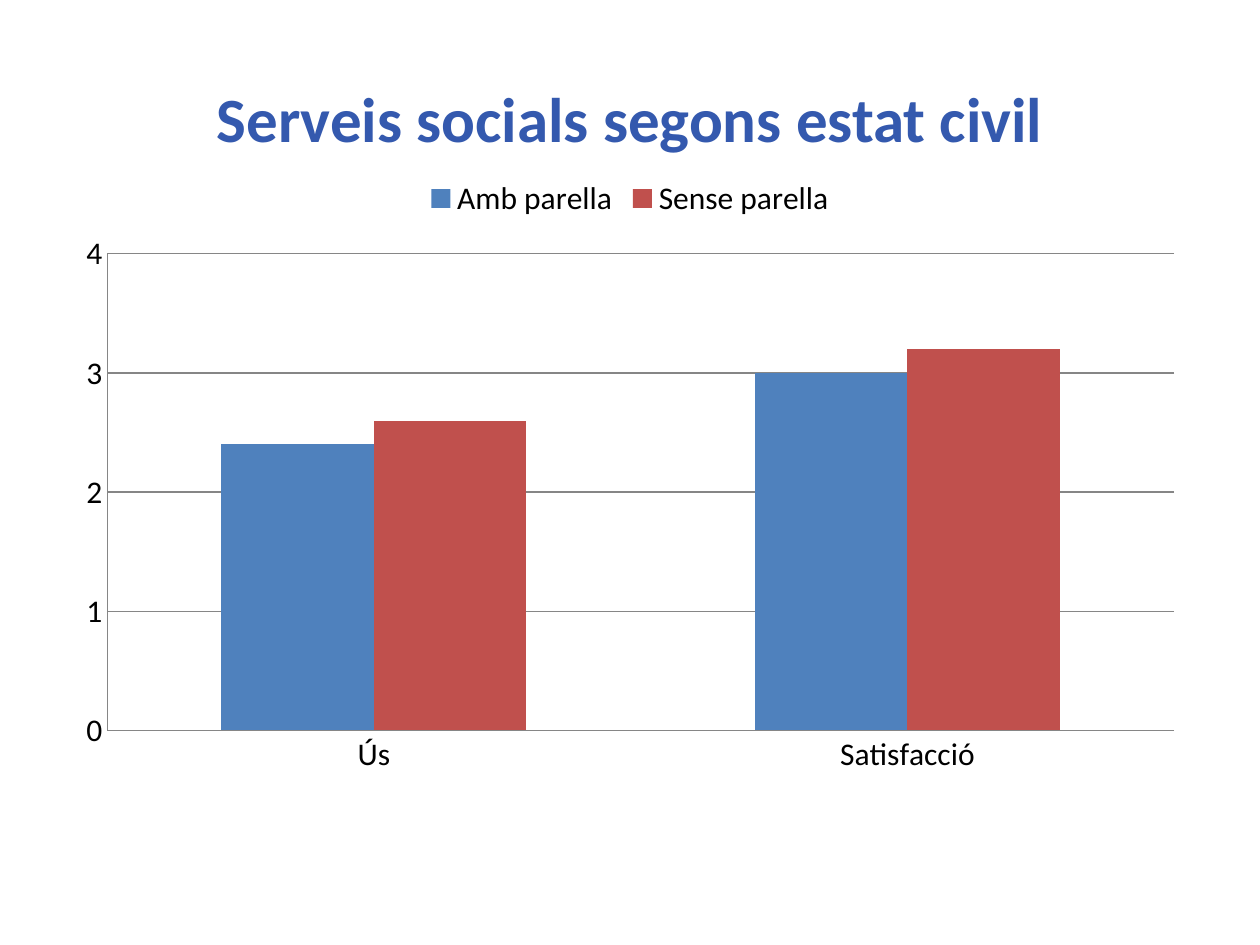
"""Build a slide with a clustered column chart on social services by marital status."""
import pptx
import pptx.chart.data
import pptx.dml.color
import pptx.enum.chart
import pptx.enum.text
import pptx.oxml
import pptx.oxml.ns
import pptx.util

RGBColor = pptx.dml.color.RGBColor
TITLE_BLUE = RGBColor(0x34, 0x59, 0xAE)
BLUE = RGBColor(0x4F, 0x81, 0xBD)
RED = RGBColor(0xC0, 0x50, 0x4D)
GREY = RGBColor(0x86, 0x86, 0x86)
BLACK = RGBColor(0, 0, 0)

FONT = "Calibri"
TITLE = "Serveis socials segons estat civil"
CATEGORIES = ["Ús", "Satisfacció"]
SERIES = [
    ("Amb parella", (2.4, 3), BLUE),
    ("Sense parella", (2.6, 3.2), RED),
]

SLIDE_SIZE = (1260, 945)
TITLE_BOX = (63, 38, 1134, 158)
CHART_BOX = (63, 164, 1134, 624)
PLOT_BOX = (107, 254, 1067, 477)


def px(length):
    """Turn px into EMU."""
    return pptx.util.Emu(length * 914400 // 126)


def add_title(slide):
    """Add the centred heading."""
    frame = slide.shapes.add_textbox(*map(px, TITLE_BOX)).text_frame
    frame.word_wrap = True
    frame.vertical_anchor = pptx.enum.text.MSO_ANCHOR.MIDDLE
    frame.text = TITLE
    heading = frame.paragraphs[0]
    heading.alignment = pptx.enum.text.PP_ALIGN.CENTER
    font = heading.runs[0].font
    font.name, font.size, font.bold = FONT, pptx.util.Pt(36), True
    font.color.rgb = TITLE_BLUE


def place_plot(chart):
    """Fix the inner plot area inside the chart."""
    left, top, width, height = CHART_BOX
    plot_left, plot_top, plot_width, plot_height = PLOT_BOX
    fractions = {
        "x": (plot_left - left) / width,
        "y": (plot_top - top) / height,
        "w": plot_width / width,
        "h": plot_height / height,
    }
    modes = '<c:xMode val="edge"/><c:yMode val="edge"/>'
    sizes = "".join(f'<c:{key} val="{value:.3f}"/>' for key, value in fractions.items())
    layout = pptx.oxml.parse_xml(
        f'<c:layout {pptx.oxml.ns.nsdecls("c")}><c:manualLayout>'
        f'<c:layoutTarget val="inner"/>{modes}{sizes}</c:manualLayout></c:layout>'
    )
    plot_area = chart.plots[0]._element.getparent()
    for old in plot_area.findall(pptx.oxml.ns.qn("c:layout")):
        plot_area.remove(old)
    plot_area.insert(0, layout)


def add_services_chart(slide):
    """Add the column chart with its legend and axes."""
    kinds = pptx.enum.chart
    data = pptx.chart.data.CategoryChartData()
    data.categories = CATEGORIES
    for name, values, _ in SERIES:
        data.add_series(name, values)
    chart = slide.shapes.add_chart(
        kinds.XL_CHART_TYPE.COLUMN_CLUSTERED, *map(px, CHART_BOX), data
    ).chart
    chart.has_title = False
    chart.font.name, chart.font.size = FONT, pptx.util.Pt(18)
    chart.font.color.rgb = BLACK
    chart.has_legend = True
    chart.legend.position = kinds.XL_LEGEND_POSITION.TOP
    chart.legend.include_in_layout = False

    columns = chart.plots[0]
    columns.gap_width, columns.overlap = 150, 0
    columns.vary_by_categories = False
    for series, (_, _, color) in zip(columns.series, SERIES):
        series.format.fill.solid()
        series.format.fill.fore_color.rgb = color

    scale = chart.value_axis
    scale.minimum_scale, scale.maximum_scale, scale.major_unit = 0, 4, 1
    scale.has_major_gridlines = True
    scale.tick_labels.number_format = "0"
    scale.tick_labels.number_format_is_linked = False
    for axis in (chart.category_axis, scale):
        axis.major_tick_mark = kinds.XL_TICK_MARK.NONE
        axis.minor_tick_mark = kinds.XL_TICK_MARK.NONE
    for part in (chart.category_axis, scale, scale.major_gridlines):
        part.format.line.color.rgb = GREY
        part.format.line.width = pptx.util.Pt(0.75)
    place_plot(chart)


def main():
    """Assemble and save the slide."""
    deck = pptx.Presentation()
    deck.slide_width, deck.slide_height = map(px, SLIDE_SIZE)
    slide = deck.slides.add_slide(deck.slide_layouts[6])
    add_title(slide)
    add_services_chart(slide)
    deck.save("out.pptx")


if __name__ == "__main__":
    main()
